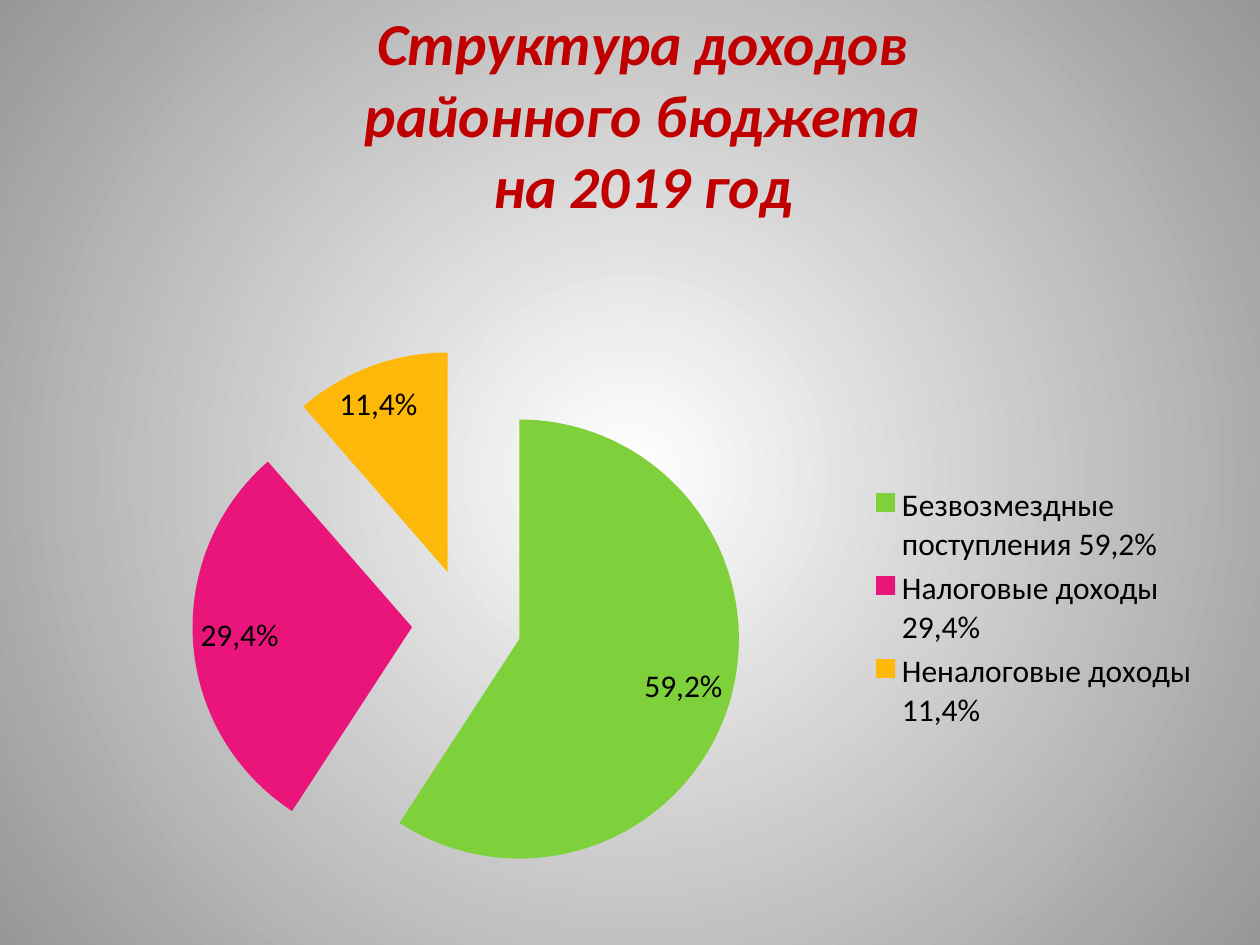
import pptx
import pptx.chart.data
import pptx.dml.color
import pptx.enum.chart
import pptx.enum.text
import pptx.oxml
import pptx.oxml.ns
import pptx.util


def color(value):
    return pptx.dml.color.RGBColor.from_string(value)


class SlideBuilder:
    font = "Calibri"
    title_color = "C00000"
    text_color = "000000"
    chart_size = 18

    def __init__(self, presentation):
        self.width = presentation.slide_width
        self.height = presentation.slide_height
        self.slide = presentation.slides.add_slide(presentation.slide_layouts[6])

    def box(self, left, top, width, height):
        """Turn shares of the slide into lengths."""
        return (int(left * self.width), int(top * self.height),
                int(width * self.width), int(height * self.height))

    def style(self, font, size, value, bold=False, italic=False):
        font.name = self.font
        font.size = pptx.util.Pt(size)
        font.color.rgb = color(value)
        font.bold = bold
        font.italic = italic

    def radial_background(self, center, edge):
        fill = self.slide.background.fill
        fill.gradient()
        for stop, position, value in zip(fill.gradient_stops, (0, 1), (center, edge)):
            stop.position = position
            stop.color.rgb = color(value)
        gradient = self.slide.element.find(".//" + pptx.oxml.ns.qn("a:gradFill"))
        gradient.remove(gradient.find(pptx.oxml.ns.qn("a:lin")))
        gradient.append(pptx.oxml.parse_xml(
            f'<a:path {pptx.oxml.ns.nsdecls("a")} path="circle">'
            '<a:fillToRect l="50000" t="50000" r="50000" b="50000"/></a:path>'))

    def title(self, lines, box, size):
        frame = self.slide.shapes.add_textbox(*self.box(*box)).text_frame
        frame.word_wrap = True
        frame.vertical_anchor = pptx.enum.text.MSO_ANCHOR.MIDDLE
        paragraph = frame.paragraphs[0]
        paragraph.alignment = pptx.enum.text.PP_ALIGN.CENTER
        for index, line in enumerate(lines):
            if index:
                paragraph.add_line_break()
            run = paragraph.add_run()
            run.text = line
            self.style(run.font, size, self.title_color, bold=True, italic=True)

    def manual_layout(self, element, modes="", after=None, **shares):
        """Place a chart part by shares of the chart's size."""
        for old in element.findall(pptx.oxml.ns.qn("c:layout")):
            element.remove(old)
        values = "".join(f'<c:{name} val="{share}"/>' for name, share in shares.items())
        layout = pptx.oxml.parse_xml(
            f'<c:layout {pptx.oxml.ns.nsdecls("c")}><c:manualLayout>'
            f'{modes}{values}</c:manualLayout></c:layout>')
        if after:
            element.find(pptx.oxml.ns.qn(after)).addnext(layout)
        else:
            element.insert(0, layout)

    def label_slice(self, point, text, shift):
        label = point.data_label
        run = label.text_frame.paragraphs[0].add_run()
        run.text = text
        self.style(run.font, self.chart_size, self.text_color)
        label.position = pptx.enum.chart.XL_LABEL_POSITION.INSIDE_END
        element = run._r.getparent()
        while element.tag != pptx.oxml.ns.qn("c:dLbl"):
            element = element.getparent()
        self.manual_layout(element, after="c:idx", x=shift[0], y=shift[1])

    def exploded_pie(self, slices, box, explosion, plot_box, legend_box):
        """Draw slices given as (name, share, fill color, label shift)."""
        data = pptx.chart.data.CategoryChartData(number_format="0.0%")
        labels = [f"{entry[1]:.1%}".replace(".", ",") for entry in slices]
        data.categories = [f"{entry[0]} {label}" for entry, label in zip(slices, labels)]
        data.add_series("Series 1", [entry[1] for entry in slices])
        chart = self.slide.shapes.add_chart(
            pptx.enum.chart.XL_CHART_TYPE.PIE, *self.box(*box), data).chart
        self.style(chart.font, self.chart_size, self.text_color)
        chart.has_title = False
        chart.has_legend = True
        chart.legend.position = pptx.enum.chart.XL_LEGEND_POSITION.RIGHT
        chart.legend.include_in_layout = False
        self.style(chart.legend.font, self.chart_size, self.text_color)

        plot = chart.plots[0]
        plot.vary_by_categories = True
        series = plot.series[0]
        series.data_labels.show_value = True
        series.data_labels.show_percentage = False
        series.data_labels.number_format = "0.0%"
        series.data_labels.number_format_is_linked = False
        series.data_labels.position = pptx.enum.chart.XL_LABEL_POSITION.INSIDE_END
        self.style(series.data_labels.font, self.chart_size, self.text_color)
        for index, ((_, _, fill, shift), label) in enumerate(zip(slices, labels)):
            point = series.points[index]
            point.format.fill.solid()
            point.format.fill.fore_color.rgb = color(fill)
            point.format.line.fill.background()
            self.label_slice(point, label, shift)
        first_point = series._element.find(pptx.oxml.ns.qn("c:dPt"))
        first_point.addprevious(pptx.oxml.parse_xml(
            f'<c:explosion {pptx.oxml.ns.nsdecls("c")} val="{explosion}"/>'))

        edges = '<c:xMode val="edge"/><c:yMode val="edge"/>'
        self.manual_layout(chart._chartSpace.chart.plotArea,
                           '<c:layoutTarget val="inner"/>' + edges, **plot_box)
        self.manual_layout(chart.legend._element, edges, after="c:legendPos", **legend_box)


def main():
    presentation = pptx.Presentation()
    presentation.slide_width = pptx.util.Inches(10)
    presentation.slide_height = pptx.util.Inches(7.5)
    builder = SlideBuilder(presentation)
    builder.radial_background("FFFFFF", "979797")
    builder.title(["Структура доходов", "районного бюджета", "на 2019 год"],
                  box=(0.06, 0, 0.9, 0.24), size=34)
    builder.exploded_pie(
        [("Безвозмездные поступления", 0.592, "7FD13B", (0, 0.01)),
         ("Налоговые доходы", 0.294, "EA157A", (0, -0.01)),
         ("Неналоговые доходы", 0.114, "FEB80A", (-0.03, 0.02))],
        box=(0.06, 0.31, 0.9, 0.66), explosion=25,
        plot_box=dict(x=0.1, y=0.09, w=0.49, h=0.88),
        legend_box=dict(x=0.7, y=0.3, w=0.29, h=0.41))
    presentation.save("out.pptx")


if __name__ == "__main__":
    main()
